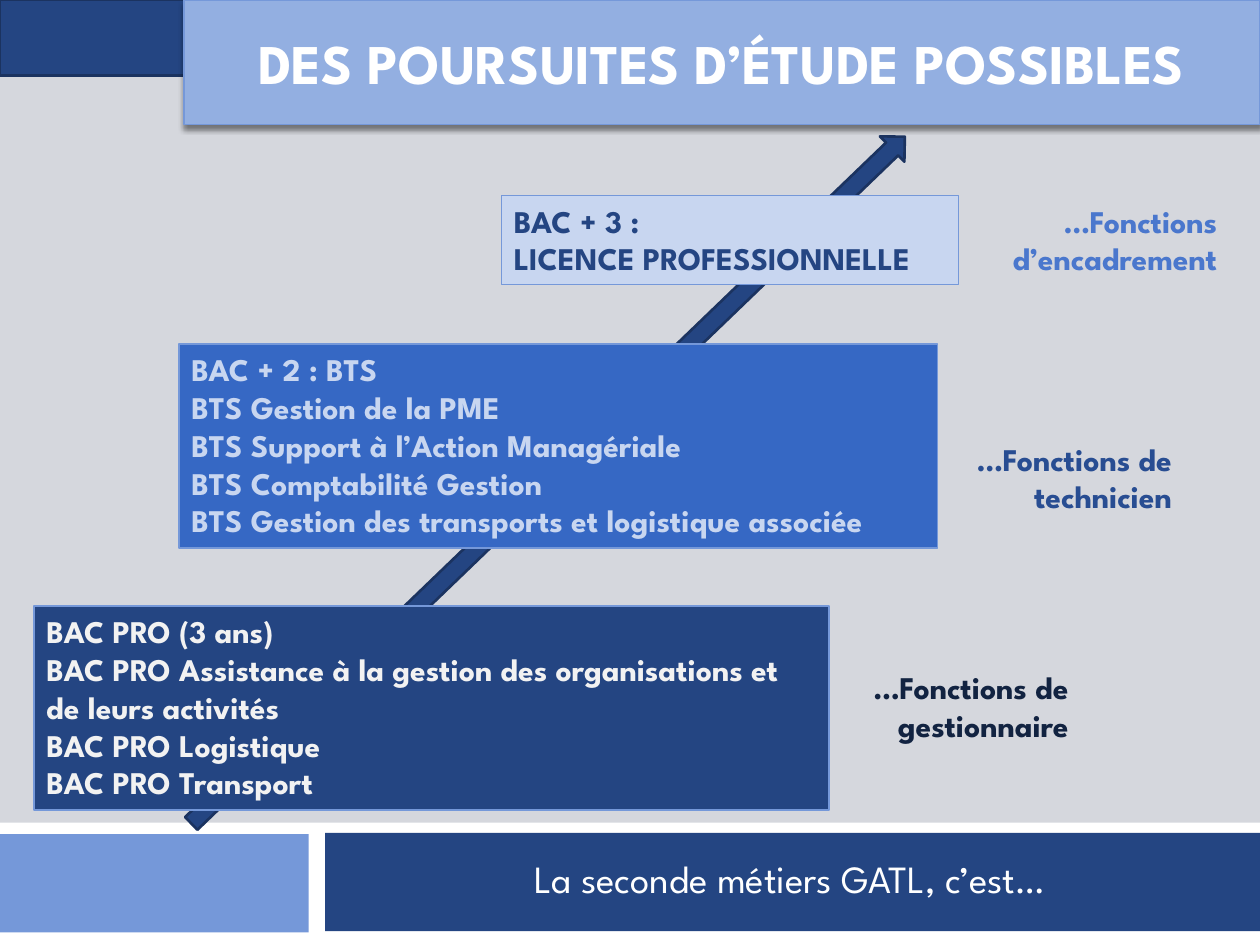
from dataclasses import dataclass
from typing import Optional

from lxml.etree import SubElement
from pptx import Presentation
from pptx.dml.color import RGBColor
from pptx.enum.shapes import MSO_SHAPE as Shape
from pptx.enum.text import MSO_ANCHOR as Anchor, MSO_AUTO_SIZE as AutoSize, PP_ALIGN as Align
from pptx.oxml.ns import qn
from pptx.util import Inches, Pt

FONT = "League Spartan"
COLORS = {
    "background": "D5D7DD", "white": "FFFFFF", "off_white": "F2F2F2",
    "navy": "244582", "navy_edge": "1B3360", "midnight": "122341",
    "deep": "284D92", "royal": "3668C4", "medium": "4A77CD",
    "sky": "7598D9", "title": "93AFE1", "pale": "C8D6F0",
}


@dataclass
class Panel:
    """A filled shape; its place is left, top, width, height in inches."""
    place: tuple[float, float, float, float]
    fill: str
    line: Optional[str] = None
    line_width: float = 0.75
    kind: Shape = Shape.RECTANGLE


@dataclass
class Words:
    """Paragraphs in one style; a newline within one is a line break."""
    paragraphs: list[str]
    color: str
    size: int = 18
    align: Align = Align.LEFT
    bold: bool = True
    anchor: Anchor = Anchor.TOP


@dataclass
class Level:
    """A study level and the kind of job it leads to."""
    panel: Panel
    words: Words
    job: str
    job_color: str
    job_place: tuple[float, float, float, float]


def rgb(name: str) -> RGBColor:
    return RGBColor.from_string(COLORS[name])


def draw_panel(page, panel: Panel):
    shape = page.shapes.add_shape(panel.kind, *map(Inches, panel.place))
    shape.shadow.inherit = False
    shape.fill.solid()
    shape.fill.fore_color.rgb = rgb(panel.fill)
    if panel.line:
        shape.line.color.rgb = rgb(panel.line)
        shape.line.width = Pt(panel.line_width)
    else:
        shape.line.fill.background()
    return shape


def write(shape, words: Words) -> None:
    frame = shape.text_frame
    frame.word_wrap = True
    frame.auto_size = AutoSize.NONE
    frame.vertical_anchor = words.anchor
    for number, text in enumerate(words.paragraphs):
        para = frame.add_paragraph() if number else frame.paragraphs[0]
        para.alignment = words.align
        for row, part in enumerate(text.split("\n")):
            if row:
                para.add_line_break()
            span = para.add_run()
            span.text = part
            span.font.name = FONT
            span.font.size = Pt(words.size)
            span.font.bold = words.bold
            span.font.color.rgb = rgb(words.color)


def draw_text(page, place: tuple[float, float, float, float], words: Words) -> None:
    write(page.shapes.add_textbox(*map(Inches, place)), words)


def add_shadow(shape) -> None:
    effects = shape._element.spPr.find(qn("a:effectLst"))
    shadow = SubElement(effects, qn("a:outerShdw"), blurRad=str(Pt(3)),
                        dist=str(Pt(2.4)), dir="5400000", rotWithShape="0")
    color = SubElement(shadow, qn("a:srgbClr"), val="000000")
    SubElement(color, qn("a:alpha"), val="45000")


LEVELS = [
    Level(
        Panel((0.27, 4.81, 6.31, 1.62), "navy", "sky"),
        Words(["BAC PRO (3 ans)\nBAC PRO Assistance à la gestion des organisations et "
               "de leurs activités", "BAC PRO Logistique", "BAC PRO Transport"], "off_white"),
        "…Fonctions de gestionnaire", "midnight", (6.3, 5.25, 2.28, 0.71)),
    Level(
        Panel((1.42, 2.73, 6.02, 1.62), "royal", "sky"),
        Words(["BAC + 2 : BTS\nBTS Gestion de la PME", "BTS Support à l’Action Managériale",
               "BTS Comptabilité Gestion",
               "BTS Gestion des transports et logistique associée"], "pale"),
        "…Fonctions de technicien", "deep", (7.2, 3.44, 2.2, 0.71)),
    Level(
        Panel((3.98, 1.55, 3.63, 0.71), "pale", "sky"),
        Words(["BAC + 3 :\nLICENCE PROFESSIONNELLE"], "navy"),
        "…Fonctions d’encadrement", "medium", (7.6, 1.55, 2.16, 0.71)),
]


def main() -> None:
    deck = Presentation()
    deck.slide_width, deck.slide_height = Inches(10), Inches(7.5)
    page = deck.slides.add_slide(deck.slide_layouts[6])
    page.background.fill.solid()
    page.background.fill.fore_color.rgb = rgb("background")

    # Footer bands and top corner
    for panel in (
        Panel((0, 6.53, 10, 0.97), "white"),
        Panel((0, 6.62, 2.45, 0.78), "sky"),
        Panel((2.58, 6.61, 7.42, 0.78), "navy"),
        Panel((0, 0, 1.46, 0.6), "navy", "navy_edge", 1.5),
    ):
        draw_panel(page, panel)

    # Title
    title = draw_panel(page, Panel((1.46, 0, 8.54, 0.99), "title", "sky", 0.79))
    add_shadow(title)
    write(title, Words(["DES POURSUITES D’ÉTUDE POSSIBLES"], "white", 32,
                       Align.CENTER, anchor=Anchor.MIDDLE))

    # Rising arrow behind the levels
    arrow = draw_panel(page, Panel((0.42, 3.67, 7.86, 0.28), "navy", "navy_edge", 1.5,
                                   Shape.RIGHT_ARROW))
    arrow.rotation = 316.1

    # Study levels with their jobs
    for level in LEVELS:
        write(draw_panel(page, level.panel), level.words)
        draw_text(page, level.job_place, Words([level.job], level.job_color, align=Align.RIGHT))

    # Footer caption
    draw_text(page, (2.72, 6.74, 7.09, 0.47),
              Words(["La seconde métiers GATL, c’est…"], "white", 22, Align.CENTER, bold=False))

    deck.save("out.pptx")


if __name__ == "__main__":
    main()
